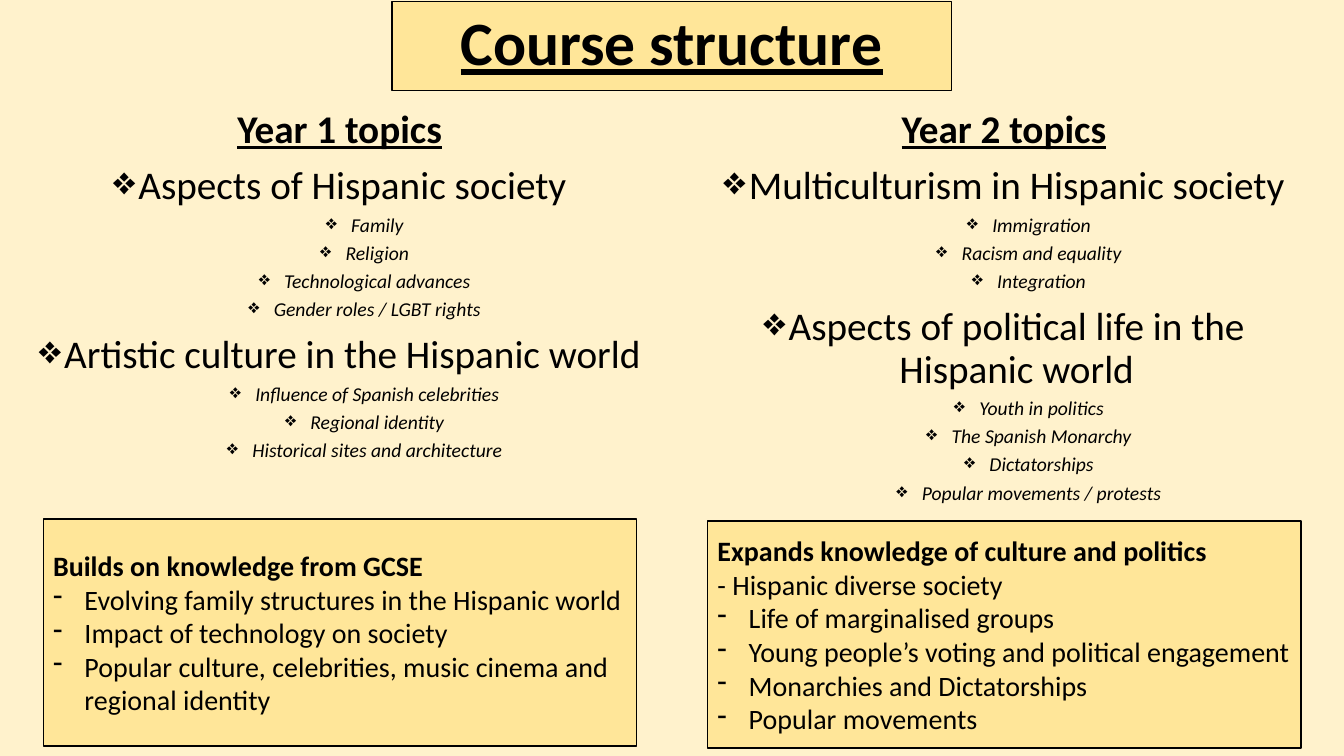
from dataclasses import dataclass

from lxml import etree
from pptx import Presentation
from pptx import util as u
from pptx.dml.color import RGBColor
from pptx.enum import shapes, text
from pptx.oxml.ns import qn


@dataclass(frozen=True)
class Theme:
    font: str = "Calibri"
    ink: RGBColor = RGBColor(0, 0, 0)
    background: RGBColor = RGBColor(0xFF, 0xF2, 0xCC)
    panel: RGBColor = RGBColor(0xFF, 0xE6, 0x99)
    title: int = 44
    topic: int = 28
    note: int = 20
    detail: int = 14


theme = Theme()
CENTER = text.PP_ALIGN.CENTER


def add_text(frame, words, size, bold=False, italic=False, underline=False,
             align=text.PP_ALIGN.LEFT, level=0, bullet=None, indent=0,
             hanging=0, before=0, spacing=1.0):
    """Add a formatted paragraph, using the frame's first one if it is free."""
    first = frame.paragraphs[0]
    paragraph = frame.add_paragraph() if first.runs else first
    paragraph.alignment = align
    paragraph.level = level
    paragraph.line_spacing = spacing
    paragraph.space_before = u.Pt(before)
    run = paragraph.add_run()
    run.text = words
    font = run.font
    font.name, font.size = theme.font, u.Pt(size)
    font.bold, font.italic, font.underline = bold, italic, underline
    font.color.rgb = theme.ink
    if bullet:
        properties = paragraph._p.get_or_add_pPr()
        properties.set("marL", str(u.Cm(indent)))
        properties.set("indent", str(-u.Cm(hanging)))
        etree.SubElement(properties, qn("a:buChar")).set("char", bullet)


def add_panel(slide, left, top, width, height, line_width):
    """Add an outlined rectangle and return its text frame."""
    shape = slide.shapes.add_shape(shapes.MSO_SHAPE.RECTANGLE, u.Cm(left),
                                   u.Cm(top), u.Cm(width), u.Cm(height))
    shape.shadow.inherit = False
    shape.fill.solid()
    shape.fill.fore_color.rgb = theme.panel
    shape.line.color.rgb = theme.ink
    shape.line.width = u.Pt(line_width)
    frame = shape.text_frame
    frame.word_wrap = True
    frame.vertical_anchor = text.MSO_ANCHOR.MIDDLE
    return frame


presentation = Presentation()
presentation.slide_width = u.Cm(33.87)
presentation.slide_height = u.Cm(19.05)
slide = presentation.slides.add_slide(presentation.slide_layouts[6])
slide.background.fill.solid()
slide.background.fill.fore_color.rgb = theme.background

# Title
title = add_panel(slide, 9.88, 0.04, 14.1, 2.24, 0.75)
add_text(title, "Course structure", theme.title, bold=True, underline=True,
         align=CENTER, spacing=0.9)

# Topics of each year
years = [
    (0.51, 12.9, "Year 1 topics", {
        "Aspects of Hispanic society": [
            "Family", "Religion", "Technological advances",
            "Gender roles / LGBT rights"],
        "Artistic culture in the Hispanic world": [
            "Influence of Spanish celebrities", "Regional identity",
            "Historical sites and architecture"],
    }),
    (17.25, 12.09, "Year 2 topics", {
        "Multiculturism in Hispanic society": [
            "Immigration", "Racism and equality", "Integration"],
        "Aspects of political life in the Hispanic world": [
            "Youth in politics", "The Spanish Monarchy", "Dictatorships",
            "Popular movements / protests"],
    }),
]
for left, height, heading, topics in years:
    column = slide.shapes.add_textbox(u.Cm(left), u.Cm(2.64), u.Cm(16.1),
                                      u.Cm(height)).text_frame
    column.word_wrap = True
    add_text(column, heading, theme.topic, bold=True, underline=True,
             align=CENTER, before=10, spacing=0.9)
    for topic, details in topics.items():
        add_text(column, topic, theme.topic, align=CENTER, bullet="❖",
                 indent=0.64, hanging=0.64, before=10, spacing=0.9)
        for detail in details:
            add_text(column, detail, theme.detail, italic=True, align=CENTER,
                     level=1, bullet="❖", indent=1.9, hanging=0.64, before=5,
                     spacing=0.9)

# Knowledge panels
panels = [
    (1.09, 13.08, "Builds on knowledge from GCSE", None, [
        "Evolving family structures in the Hispanic world",
        "Impact of technology on society",
        "Popular culture, celebrities, music cinema and regional identity"]),
    (17.83, 13.13, "Expands knowledge of culture and politics",
     "- Hispanic diverse society", [
         "Life of marginalised groups",
         "Young people’s voting and political engagement",
         "Monarchies and Dictatorships",
         "Popular movements"]),
]
for left, top, heading, opening, points in panels:
    panel = add_panel(slide, left, top, 14.96, 5.72, 1)
    add_text(panel, heading, theme.note, bold=True)
    if opening:
        add_text(panel, opening, theme.note)
    for point in points:
        add_text(panel, point, theme.note, bullet="-", indent=0.79,
                 hanging=0.79)

presentation.save("out.pptx")
